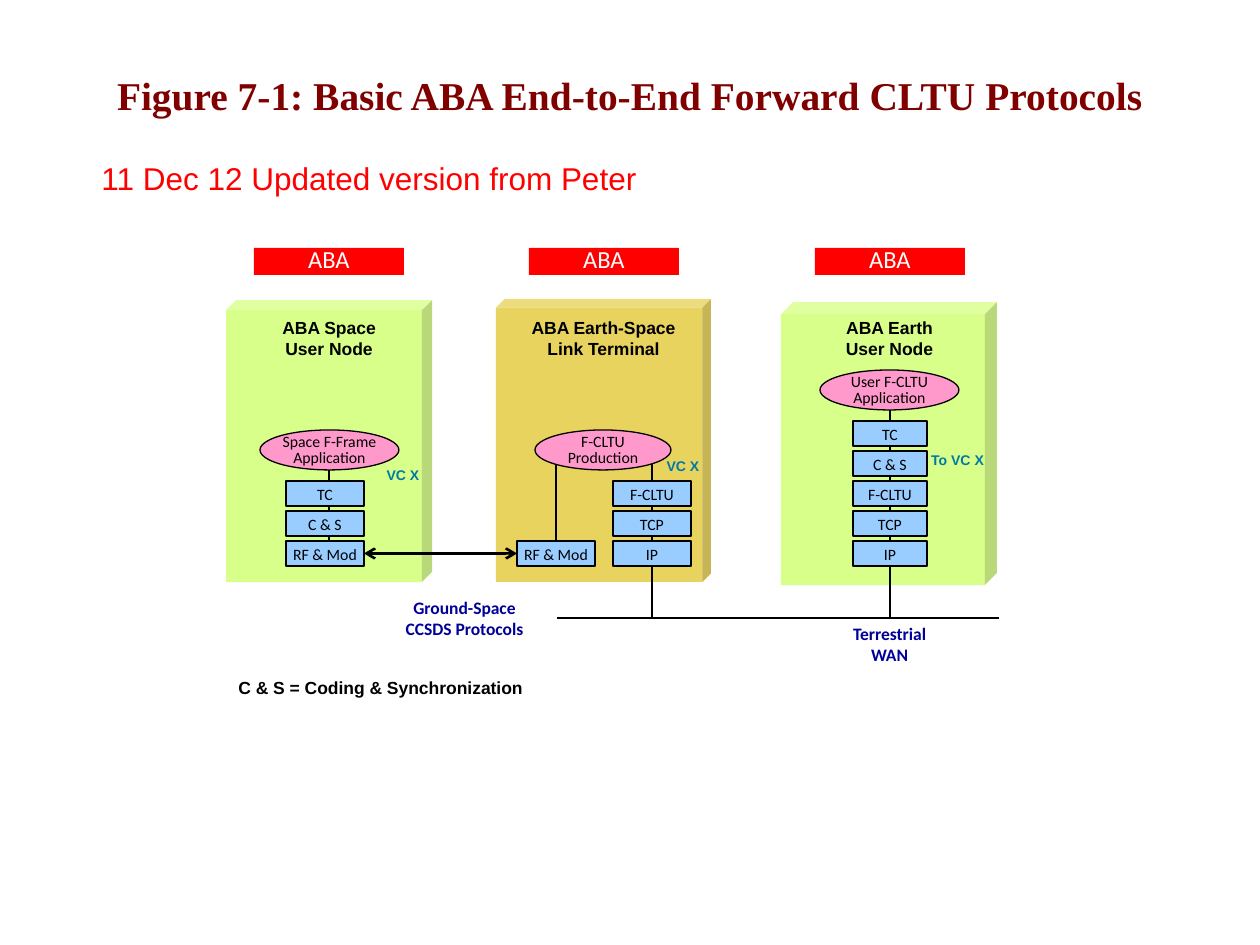
from dataclasses import dataclass

import lxml.etree
import pptx
import pptx.dml.color
import pptx.enum.shapes
import pptx.enum.text
import pptx.oxml
import pptx.oxml.ns
import pptx.util

SHAPE = pptx.enum.shapes.MSO_SHAPE
ALIGN = pptx.enum.text.PP_ALIGN
ANCHOR = pptx.enum.text.MSO_ANCHOR
qn = pptx.oxml.ns.qn
BOX_HEIGHT, BOX_PITCH, BOTTOM_BOX = 25, 30, 541
WAN_Y = 618


@dataclass(frozen=True)
class Style:
    font: str
    size: float
    color: str
    bold: bool = False
    spacing: float = 1.0


@dataclass(frozen=True)
class Theme:
    title: Style = Style("Times New Roman", 22.5, "800000", True)
    update: Style = Style("Arial", 18, "FF0000")
    agency: Style = Style("Calibri", 14, "FFFFFF", spacing=0.8)
    node: Style = Style("Arial", 10, "000000", True)
    network: Style = Style("Calibri", 10, "000099", True)
    channel: Style = Style("Arial", 8, "0079A4", True)
    protocol: Style = Style("Calibri", 9, "000000")
    application: Style = Style("Calibri", 9, "000000", spacing=0.8)
    user_node: str = "CCFF66"
    link_node: str = "E0C62C"
    agency_fill: str = "FF0000"
    protocol_fill: str = "99CCFF"
    application_fill: str = "FF99CC"
    line: str = "000000"
    outline: float = 0.75
    wire: float = 1.5


@dataclass(frozen=True)
class Area:
    x: int
    y: int
    w: int
    h: int


@dataclass(frozen=True)
class Node:
    cube: Area
    depth: float
    color: str
    name: list[str]
    name_area: Area
    agency_x: int


@dataclass(frozen=True)
class Stack:
    x: int
    width: int
    stem_x: int
    stem_top: int
    protocols: list[str]


@dataclass(frozen=True)
class Label:
    lines: list[str]
    area: Area
    style: Style
    wrap: bool = True
    align: ALIGN = ALIGN.CENTER


THEME = Theme()
NODES = [
    Node(Area(781, 302, 216, 283), 0.056, THEME.user_node,
         ["ABA Earth User Node"], Area(813, 311, 153, 55), 815),
    Node(Area(496, 299, 215, 283), 0.04, THEME.link_node,
         ["ABA Earth-Space", "Link Terminal"], Area(515, 311, 177, 55), 529),
    Node(Area(226, 300, 206, 282), 0.049, THEME.user_node,
         ["ABA Space User Node"], Area(256, 311, 146, 55), 254),
]
SPACE_STACK = Stack(286, 78, 329, 470, ["RF & Mod", "C & S", "TC"])
RADIO_STACK = Stack(517, 78, 556, 464, ["RF & Mod"])
LINK_STACK = Stack(613, 78, 652, 464, ["IP", "TCP", "F-CLTU"])
EARTH_STACK = Stack(853, 74, 890, 410, ["IP", "TCP", "F-CLTU", "C & S", "TC"])
APPLICATIONS = [
    (["F-CLTU", "Production"], Area(535, 430, 136, 40)),
    (["Space F-Frame", "Application"], Area(260, 430, 139, 40)),
    (["User F-CLTU", "Application"], Area(820, 370, 139, 40)),
]
LABELS = [
    Label(["11 Dec 12 Updated version from Peter"], Area(86, 153, 566, 51), THEME.update, False),
    Label(["VC X"], Area(374, 460, 58, 30), THEME.channel, False),
    Label(["VC X"], Area(654, 451, 58, 30), THEME.channel, False),
    Label(["To VC X"], Area(918, 445, 79, 30), THEME.channel, False),
    Label(["Ground-Space", "CCSDS Protocols"], Area(383, 591, 163, 54), THEME.network),
    Label(["Terrestrial", "WAN"], Area(818, 617, 143, 55), THEME.network),
    Label(["C & S = Coding & Synchronization"], Area(226, 671, 314, 34), THEME.node, False, ALIGN.LEFT),
]


def px(count: int) -> pptx.util.Emu:
    return pptx.util.Emu(round(count * 914400 / 126))


def rgb(color: str) -> pptx.dml.color.RGBColor:
    return pptx.dml.color.RGBColor.from_string(color)


def frame(area: Area) -> list[pptx.util.Emu]:
    return [px(area.x), px(area.y), px(area.w), px(area.h)]


def write(text, lines: list[str], style: Style, align=ALIGN.CENTER) -> None:
    text.text = "\n".join(lines)
    for paragraph in text.paragraphs:
        paragraph.alignment = align
        paragraph.line_spacing = style.spacing
        paragraph.font.name = style.font
        paragraph.font.size = pptx.util.Pt(style.size)
        paragraph.font.bold = style.bold
        paragraph.font.color.rgb = rgb(style.color)


def add_block(shapes, kind, area: Area, fill: str, outlined: bool = False):
    block = shapes.add_shape(kind, *frame(area))
    block.shadow.inherit = False
    block.fill.solid()
    block.fill.fore_color.rgb = rgb(fill)
    if outlined:
        block.line.color.rgb = rgb(THEME.line)
        block.line.width = pptx.util.Pt(THEME.outline)
    else:
        block.line.fill.background()
    return block


def set_insets(text, across: float, down: float) -> None:
    text.margin_left = text.margin_right = pptx.util.Inches(across)
    text.margin_top = text.margin_bottom = pptx.util.Inches(down)
    text.vertical_anchor = ANCHOR.TOP


def add_label(shapes, label: Label) -> None:
    text = shapes.add_textbox(*frame(label.area)).text_frame
    text.word_wrap = label.wrap
    write(text, label.lines, label.style, label.align)


def add_node(shapes, node: Node) -> None:
    cube = add_block(shapes, SHAPE.CUBE, node.cube, node.color)
    cube.adjustments[0] = node.depth
    color = cube.fill._xPr.find(qn("a:solidFill"))[0]
    lxml.etree.SubElement(color, qn("a:alpha"), val="76000")
    add_label(shapes, Label(node.name, node.name_area, THEME.node))
    agency = add_block(shapes, SHAPE.RECTANGLE, Area(node.agency_x, 248, 150, 27), THEME.agency_fill)
    write(agency.text_frame, ["ABA"], THEME.agency)


def add_wire(shapes, x1: int, y1: int, x2: int, y2: int):
    wire = shapes.add_connector(pptx.enum.shapes.MSO_CONNECTOR.STRAIGHT, px(x1), px(y1), px(x2), px(y2))
    wire.line.color.rgb = rgb(THEME.line)
    wire.line.width = pptx.util.Pt(THEME.wire)
    lxml.etree.SubElement(wire._element.spPr, qn("a:effectLst"))
    return wire


def add_stack(shapes, stack: Stack):
    boxes = []
    for level, protocol in enumerate(stack.protocols):
        area = Area(stack.x, BOTTOM_BOX - level * BOX_PITCH, stack.width, BOX_HEIGHT)
        box = add_block(shapes, SHAPE.RECTANGLE, area, THEME.protocol_fill, True)
        set_insets(box.text_frame, 0.04, 0.03)
        write(box.text_frame, [protocol], THEME.protocol)
        boxes.append(box)
        if level == 0:
            stem = add_wire(shapes, stack.stem_x, stack.stem_top, stack.stem_x, BOTTOM_BOX)
            if stack.stem_x == stack.x + stack.width // 2:
                stem.end_connect(box, 0)
    return boxes[0]


def add_application(shapes, lines: list[str], area: Area) -> None:
    oval = add_block(shapes, SHAPE.OVAL, area, THEME.application_fill, True)
    set_insets(oval.text_frame, 0, 0)
    write(oval.text_frame, lines, THEME.application)


def main() -> None:
    deck = pptx.Presentation()
    deck.slide_width, deck.slide_height = px(1260), px(945)
    slide = deck.slides.add_slide(deck.slide_layouts[5])
    shapes = slide.shapes
    title = shapes.title
    title.left, title.top, title.width, title.height = frame(Area(95, 42, 1071, 105))
    write(title.text_frame, ["Figure 7-1: Basic ABA End-to-End Forward CLTU Protocols"], THEME.title)

    for node in NODES:
        add_node(shapes, node)
    add_wire(shapes, 557, WAN_Y, 999, WAN_Y)
    space_radio, ground_radio, link_ip, earth_ip = [
        add_stack(shapes, stack) for stack in (SPACE_STACK, RADIO_STACK, LINK_STACK, EARTH_STACK)]
    for stack, terminal in ((LINK_STACK, link_ip), (EARTH_STACK, earth_ip)):
        drop = add_wire(shapes, stack.stem_x, BOTTOM_BOX + BOX_HEIGHT, stack.stem_x, WAN_Y)
        drop.begin_connect(terminal, 2)
    radio_link = add_wire(shapes, 364, 553, 517, 553)
    radio_link.begin_connect(space_radio, 3)
    radio_link.end_connect(ground_radio, 1)
    for end in ("a:headEnd", "a:tailEnd"):
        lxml.etree.SubElement(radio_link.line._get_or_add_ln(), qn(end), type="arrow")
    for lines, area in APPLICATIONS:
        add_application(shapes, lines, area)
    for label in LABELS:
        add_label(shapes, label)
    deck.save("out.pptx")


if __name__ == "__main__":
    main()
